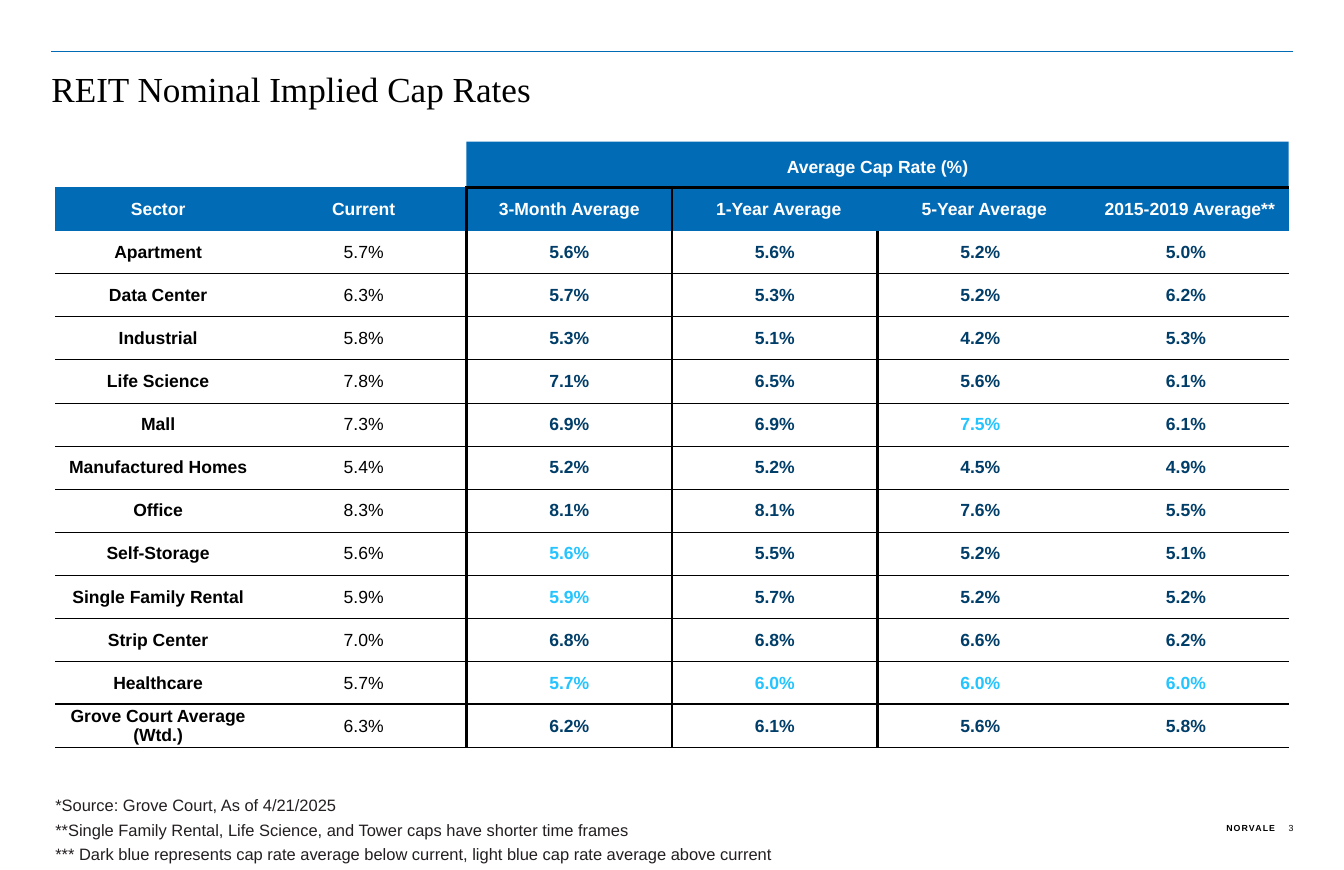
from dataclasses import dataclass

from lxml.etree import SubElement
from pptx import Presentation
from pptx.dml.color import RGBColor
from pptx.enum.shapes import MSO_CONNECTOR, MSO_SHAPE
from pptx.enum.text import MSO_ANCHOR, MSO_AUTO_SIZE, PP_ALIGN
from pptx.oxml.ns import qn
from pptx.util import Inches, Pt


@dataclass(frozen=True)
class Theme:
    blue: str = "026BB6"
    dark_blue: str = "003E69"
    light_blue: str = "23C4FF"
    black: str = "000000"
    white: str = "FFFFFF"
    note: str = "231F20"
    sans: str = "Arial"
    serif: str = "Times New Roman"
    title_size: float = 32
    table_size: float = 16
    note_size: float = 15
    footer_size: float = 8
    thin: float = 0.5
    thick: float = 2.25


THEME = Theme()
PLAIN_TABLE_STYLE = "{2D5ABB26-0587-4C30-8999-92F81FD0307C}"
HEADINGS = ["Sector", "Current", "3-Month Average", "1-Year Average",
            "5-Year Average", "2015-2019 Average**"]
CAP_RATES = [
    ("Apartment", 5.7, 5.6, 5.6, 5.2, 5.0),
    ("Data Center", 6.3, 5.7, 5.3, 5.2, 6.2),
    ("Industrial", 5.8, 5.3, 5.1, 4.2, 5.3),
    ("Life Science", 7.8, 7.1, 6.5, 5.6, 6.1),
    ("Mall", 7.3, 6.9, 6.9, 7.5, 6.1),
    ("Manufactured Homes", 5.4, 5.2, 5.2, 4.5, 4.9),
    ("Office", 8.3, 8.1, 8.1, 7.6, 5.5),
    ("Self-Storage", 5.6, 5.6, 5.5, 5.2, 5.1),
    ("Single Family Rental", 5.9, 5.9, 5.7, 5.2, 5.2),
    ("Strip Center", 7.0, 6.8, 6.8, 6.6, 6.2),
    ("Healthcare", 5.7, 5.7, 6.0, 6.0, 6.0),
    ("Grove Court Average (Wtd.)", 6.3, 6.2, 6.1, 5.6, 5.8),
]
NOTES = [
    "*Source: Grove Court, As of 4/21/2025",
    "**Single Family Rental, Life Science, and Tower caps have shorter time frames",
    "*** Dark blue represents cap rate average below current, "
    "light blue cap rate average above current",
]


def format_paragraph(paragraph, size, color, bold=False, align=PP_ALIGN.LEFT, font=THEME.sans):
    paragraph.alignment = align
    paragraph.font.name = font
    paragraph.font.size = Pt(size)
    paragraph.font.bold = bold
    paragraph.font.color.rgb = RGBColor.from_string(color)


def set_margins(box, left=0, top=0, right=0, bottom=0):
    box.margin_left, box.margin_top = Inches(left), Inches(top)
    box.margin_right, box.margin_bottom = Inches(right), Inches(bottom)


def add_title(slide, text):
    title = slide.shapes.title
    title.left, title.top = Inches(0.65), Inches(0.85)
    title.width, title.height = Inches(15.7), Inches(1.1)
    frame = title.text_frame
    frame.text = text
    frame.auto_size = MSO_AUTO_SIZE.NONE
    frame.vertical_anchor = MSO_ANCHOR.TOP
    set_margins(frame)
    format_paragraph(frame.paragraphs[0], THEME.title_size, THEME.black, font=THEME.serif)


def add_rule(slide):
    rule = slide.shapes.add_connector(
        MSO_CONNECTOR.STRAIGHT, Inches(0.65), Inches(0.65), Inches(16.35), Inches(0.65))
    rule.line.color.rgb = RGBColor.from_string(THEME.blue)
    rule.line.width = Pt(THEME.thin)
    SubElement(rule._element.spPr, qn("a:effectLst"))


def add_text(slide, left, top, width, height, lines, size, color,
             bold=False, align=PP_ALIGN.LEFT, anchor=MSO_ANCHOR.TOP, spacing=None):
    box = slide.shapes.add_textbox(Inches(left), Inches(top), Inches(width), Inches(height))
    frame = box.text_frame
    frame.word_wrap = True
    frame.vertical_anchor = anchor
    set_margins(frame)
    frame.text = "\n".join(lines)
    for paragraph in frame.paragraphs:
        format_paragraph(paragraph, size, color, bold, align)
        paragraph.line_spacing = spacing
    return frame


def add_band(slide, text):
    band = slide.shapes.add_shape(
        MSO_SHAPE.RECTANGLE, Inches(5.9), Inches(1.79), Inches(10.4), Inches(0.56))
    band.shadow.inherit = False
    band.fill.solid()
    band.fill.fore_color.rgb = RGBColor.from_string(THEME.blue)
    band.line.fill.background()
    frame = band.text_frame
    frame.text = text
    frame.vertical_anchor = MSO_ANCHOR.MIDDLE
    paragraph = frame.paragraphs[0]
    format_paragraph(paragraph, THEME.table_size, THEME.white, True, PP_ALIGN.CENTER)
    paragraph.line_spacing = 1.25


def set_borders(cell, widths):
    """Draw black borders; widths maps L, R, T and B to points."""
    properties = cell._tc.get_or_add_tcPr()
    borders = [side for side in "LRTB" if side in widths]
    for position, side in enumerate(borders):
        line = SubElement(properties, qn(f"a:ln{side}"), w=str(Pt(widths[side])))
        fill = SubElement(line, qn("a:solidFill"))
        SubElement(fill, qn("a:srgbClr"), val=THEME.black)
        properties.insert(position, line)


def border_widths(row, column):
    last = len(CAP_RATES)
    widths = {}
    if row > 0:
        widths["B"] = THEME.thick if row == last - 1 else THEME.thin
    if row > 1:
        widths["T"] = THEME.thick if row == last else THEME.thin
    if row == 0 and column >= 2:
        widths["T"] = THEME.thick
    divided = (2,) if row == 0 else (2, 3)
    if column in divided:
        widths["L"] = THEME.thick
    if column + 1 in divided:
        widths["R"] = THEME.thick
    return widths


def fill_cell(cell, text, color, bold):
    cell.text = text
    cell.vertical_anchor = MSO_ANCHOR.MIDDLE
    format_paragraph(cell.text_frame.paragraphs[0], THEME.table_size, color, bold,
                     PP_ALIGN.CENTER)


def add_cap_rate_table(slide):
    row_count, column_count = len(CAP_RATES) + 1, len(HEADINGS)
    table = slide.shapes.add_table(row_count, column_count, Inches(0.7), Inches(2.37),
                                   Inches(15.6), Inches(7.08)).table
    table.horz_banding = False
    table._tbl.tblPr.find(qn("a:tableStyleId")).text = PLAIN_TABLE_STYLE

    for column, heading in enumerate(HEADINGS):
        cell = table.cell(0, column)
        fill_cell(cell, heading, THEME.white, True)
        cell.fill.solid()
        cell.fill.fore_color.rgb = RGBColor.from_string(THEME.blue)
        if column >= 3:
            properties = cell.text_frame.paragraphs[0]._p.get_or_add_pPr()
            properties.set("marL", str(Inches(0.1)))
        set_borders(cell, border_widths(0, column))

    for row, (sector, current, *averages) in enumerate(CAP_RATES, start=1):
        entries = [(sector, THEME.black, True), (f"{current:.1f}%", THEME.black, False)]
        for average in averages:
            color = THEME.dark_blue if average < current else THEME.light_blue
            entries.append((f"{average:.1f}%", color, True))
        for column, entry in enumerate(entries):
            cell = table.cell(row, column)
            fill_cell(cell, *entry)
            set_margins(cell, 0.01, 0.01, 0.01)
            cell.fill.background()
            set_borders(cell, border_widths(row, column))


def add_footer(slide):
    style = dict(size=THEME.footer_size, color=THEME.black, align=PP_ALIGN.RIGHT,
                 anchor=MSO_ANCHOR.MIDDLE)
    brand = add_text(slide, 15.33, 10.39, 0.8, 0.15, ["NORVALE"], bold=True, **style)
    brand.paragraphs[0].runs[0].font._element.set("spc", "100")
    add_text(slide, 16.07, 10.39, 0.29, 0.15, ["3"], **style)


def main():
    presentation = Presentation()
    presentation.slide_width, presentation.slide_height = Inches(17), Inches(11)
    slide = presentation.slides.add_slide(presentation.slide_layouts[5])
    add_rule(slide)
    add_title(slide, "REIT Nominal Implied Cap Rates")
    add_cap_rate_table(slide)
    add_text(slide, 0.7, 9.99, 9.13, 0.92, NOTES, THEME.note_size, THEME.note, spacing=1.25)
    add_band(slide, "Average Cap Rate (%)")
    add_footer(slide)
    presentation.save("out.pptx")


if __name__ == "__main__":
    main()
